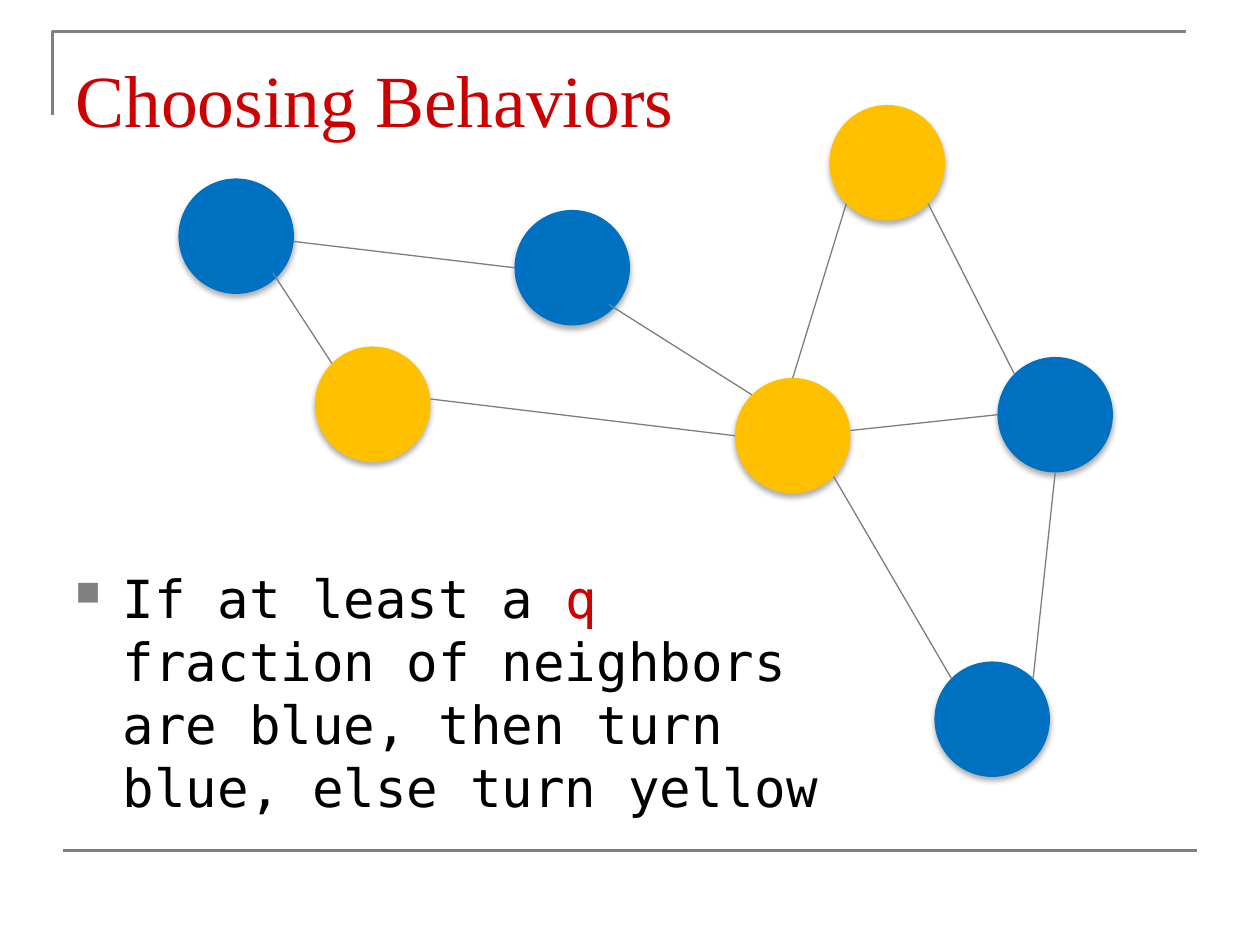
import pptx
import pptx.dml.color
import pptx.enum.shapes
import pptx.enum.text
import pptx.oxml
import pptx.oxml.ns
import pptx.util

PX = pptx.util.Inches(1) // 120
GRAY = pptx.dml.color.RGBColor(0x80, 0x80, 0x80)
EDGE_GRAY = pptx.dml.color.RGBColor(0x7D, 0x7D, 0x7D)
RED = pptx.dml.color.RGBColor(0xCC, 0x00, 0x00)
BLACK = pptx.dml.color.RGBColor(0x00, 0x00, 0x00)
BLUE = pptx.dml.color.RGBColor(0x00, 0x70, 0xC0)
YELLOW = pptx.dml.color.RGBColor(0xFF, 0xC0, 0x00)

NODE_SIZE = 110
NODES = [
    (320, 100, BLUE), (530, 260, YELLOW), (620, 0, YELLOW), (130, 230, YELLOW),
    (780, 240, BLUE), (720, 530, BLUE), (0, 70, BLUE),
]
EDGES = [
    (110, 130, 320, 155), (90, 160, 146, 246), (410, 190, 546, 276),
    (240, 280, 530, 315), (624, 354, 736, 546), (640, 310, 780, 295),
    (636, 94, 585, 260), (714, 94, 796, 256), (814, 546, 835, 350),
]
NS = 'xmlns:a="http://schemas.openxmlformats.org/drawingml/2006/main"'
SHADOW = (
    f'<a:effectLst {NS}><a:outerShdw blurRad="44450" dist="27940" dir="5400000" '
    'rotWithShape="0"><a:srgbClr val="000000"><a:alpha val="32000"/></a:srgbClr>'
    '</a:outerShdw></a:effectLst>'
)


def set_effects(shape, xml):
    properties = shape._element.spPr
    for effects in properties.findall(pptx.oxml.ns.qn("a:effectLst")):
        properties.remove(effects)
    properties.append(pptx.oxml.parse_xml(xml))


def add_line(slide, x1, y1, x2, y2, color, weight):
    line = slide.shapes.add_connector(
        pptx.enum.shapes.MSO_CONNECTOR.STRAIGHT, x1 * PX, y1 * PX, x2 * PX, y2 * PX)
    line.line.color.rgb = color
    line.line.width = pptx.util.Pt(weight)
    set_effects(line, f"<a:effectLst {NS}/>")


def add_frame(slide, left, top, width, height):
    outline = slide.shapes.build_freeform(left, top + 80, scale=PX)
    outline.add_line_segments([(left, top), (left + width, top)], close=False)
    corner = outline.convert_to_shape()
    corner.fill.background()
    corner.line.color.rgb = GRAY
    corner.line.width = pptx.util.Pt(1.5)
    corner.shadow.inherit = False
    add_line(slide, left + 10, top + height, left + width + 10, top + height, GRAY, 1.5)


def add_text(slide, left, top, width, height):
    box = slide.shapes.add_textbox(left * PX, top * PX, width * PX, height * PX)
    frame = box.text_frame
    frame.word_wrap = True
    frame.vertical_anchor = pptx.enum.text.MSO_ANCHOR.TOP
    return frame


def format_run(run, font, size, color):
    run.font.name = font
    run.font.size = pptx.util.Pt(size)
    run.font.color.rgb = color


def add_title(slide, left, top, width, height):
    title = add_text(slide, left, top, width, height)
    title.margin_top = 15 * PX
    title.text = "Choosing Behaviors"
    format_run(title.paragraphs[0].runs[0], "Times New Roman", 42, RED)


def add_rule(slide, left, top, width, height):
    rule = add_text(slide, left, top, width, height).paragraphs[0]
    rule.line_spacing = pptx.util.Pt(36)
    for words, color in [
        ("If at least a ", BLACK),
        ("q", RED),
        (" fraction of neighbors are blue, then turn blue, else turn yellow", BLACK),
    ]:
        run = rule.add_run()
        run.text = words
        format_run(run, "DejaVu Sans Mono", 30, color)
    properties = rule._p.get_or_add_pPr()
    properties.set("marL", str(45 * PX))
    properties.set("indent", str(-45 * PX))
    for bullet in (
        f'<a:buClr {NS}><a:srgbClr val="{GRAY}"/></a:buClr>',
        f'<a:buSzPct {NS} val="65000"/>',
        f'<a:buChar {NS} char="■"/>',
    ):
        properties.append(pptx.oxml.parse_xml(bullet))


def add_network(slide, left, top):
    for x, y, color in NODES:
        node = slide.shapes.add_shape(
            pptx.enum.shapes.MSO_SHAPE.OVAL,
            (left + x) * PX, (top + y) * PX, NODE_SIZE * PX, NODE_SIZE * PX)
        node.fill.solid()
        node.fill.fore_color.rgb = color
        node.line.fill.background()
        set_effects(node, SHADOW)
    for x1, y1, x2, y2 in EDGES:
        add_line(slide, left + x1, top + y1, left + x2, top + y2, EDGE_GRAY, 0.75)


def main():
    deck = pptx.Presentation()
    deck.slide_width = 1200 * PX
    deck.slide_height = 900 * PX
    slide = deck.slides.add_slide(deck.slide_layouts[6])
    add_frame(slide, 50, 30, 1080, 780)
    add_title(slide, 60, 36, 1080, 150)
    add_rule(slide, 60, 533, 780, 271)
    add_network(slide, 170, 100)
    deck.save("out.pptx")


if __name__ == "__main__":
    main()
